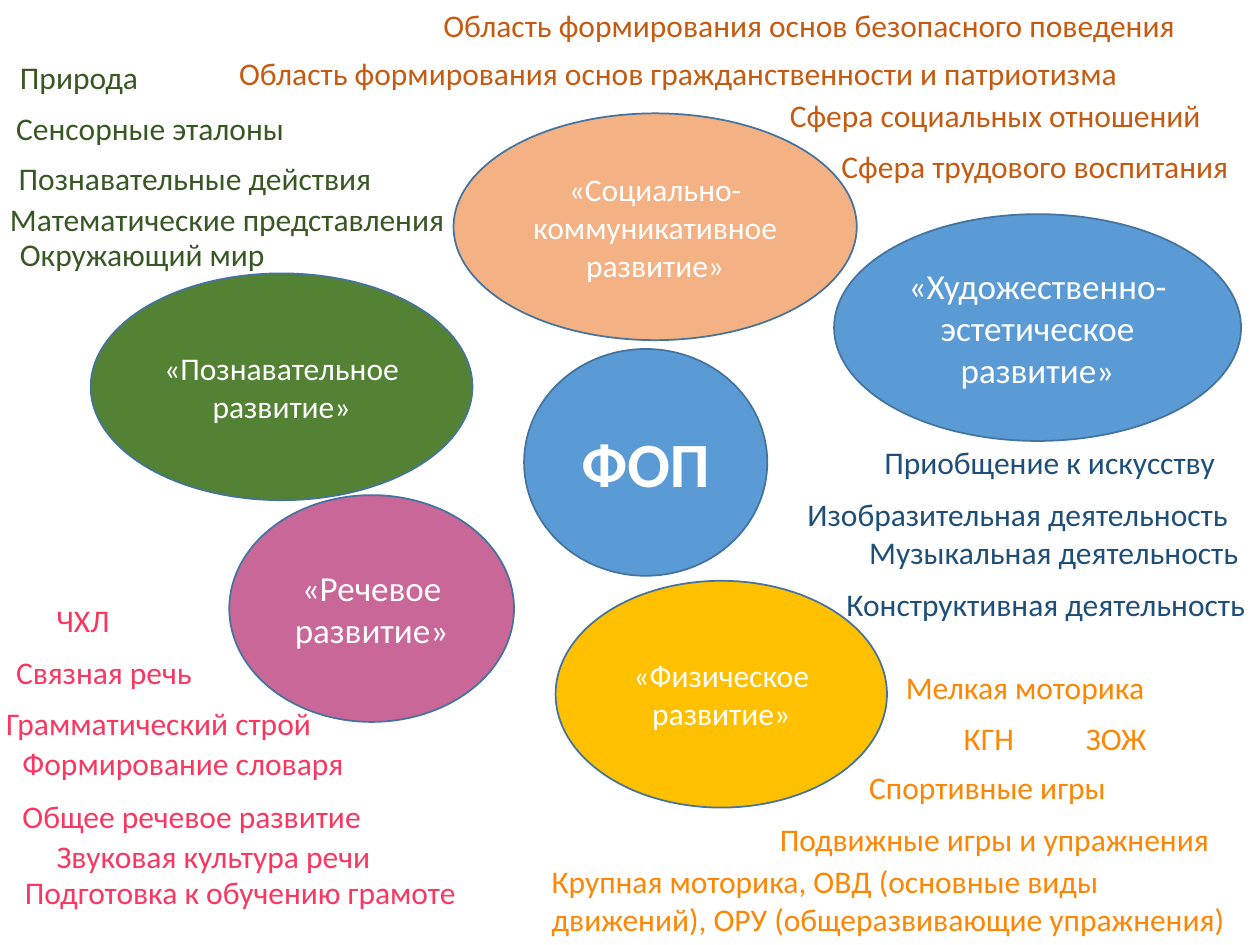
from pptx import Presentation
from pptx.dml.color import RGBColor
from pptx.enum.shapes import MSO_SHAPE
from pptx.enum.text import MSO_ANCHOR, MSO_AUTO_SIZE, PP_ALIGN
from pptx.util import Inches, Pt

OVAL = MSO_SHAPE.OVAL
MIDDLE = MSO_ANCHOR.MIDDLE
CENTER = PP_ALIGN.CENTER
GROW = MSO_AUTO_SIZE.SHAPE_TO_FIT_TEXT
FONT = "Calibri"
OVAL_HEIGHT = 1.8
LABEL_HEIGHT = 0.4


def color(hex_value):
    return RGBColor.from_string(hex_value)


def add_run(paragraph, text, size, hex_value, bold=False):
    run = paragraph.add_run()
    run.text = text
    run.font.name = FONT
    run.font.size = Pt(size)
    run.font.bold = bold
    run.font.color.rgb = color(hex_value)


prs = Presentation()
prs.slide_width = Inches(10)
prs.slide_height = Inches(7.5)
slide = prs.slides.add_slide(prs.slide_layouts[6])

# Programme in the centre and the five areas around it:
# left, top, width, fill, text size, paragraphs
areas = [
    (4.16, 2.77, 1.93, "5B9BD5", 36, ["ФОП"]),
    (0.72, 2.17, 3.03, "548235", 18, ["«Познавательное развитие»"]),
    (6.62, 1.7, 3.23, "5B9BD5", 20, ["«Художественно-эстетическое развитие»"]),
    (4.41, 4.61, 2.63, "FFC000", 18, ["«Физическое", "развитие»"]),
    (1.82, 3.93, 2.26, "C96798", 20, ["«Речевое развитие»"]),
    (3.6, 0.9, 3.2, "F4B183", 18, ["«Социально-коммуникативное развитие»"]),
]
for left, top, width, fill, size, lines in areas:
    area = slide.shapes.add_shape(
        OVAL, Inches(left), Inches(top), Inches(width), Inches(OVAL_HEIGHT))
    area.shadow.inherit = False
    area.fill.solid()
    area.fill.fore_color.rgb = color(fill)
    area.line.color.rgb = color("43739E")
    area.line.width = Pt(1)
    frame = area.text_frame
    frame.word_wrap = True
    frame.vertical_anchor = MIDDLE
    for index, line in enumerate(lines):
        paragraph = frame.add_paragraph() if index else frame.paragraphs[0]
        paragraph.alignment = CENTER
        add_run(paragraph, line, size, "FFFFFF", bold=lines == ["ФОП"])

# Topics of each area, by text colour: left, top, width, text
topics = {
    # Artistic and aesthetic
    "1F4E79": [
        (6.92, 3.47, 2.86, "Приобщение к искусству"),
        (6.31, 3.88, 3.58, "Изобразительная деятельность"),
        (6.8, 4.18, 3.16, "Музыкальная деятельность"),
        (6.62, 4.59, 3.4, "Конструктивная деятельность"),
    ],
    # Cognitive
    "385723": [
        (0.06, 0.41, 1.21, "Природа"),
        (0.03, 0.82, 2.41, "Сенсорные эталоны"),
        (0.05, 1.21, 3.03, "Познавательные действия"),
        (-0.02, 1.54, 3.69, "Математические представления"),
        (0.06, 1.82, 2.17, "Окружающий мир"),
    ],
    # Social and communicative
    "C55A11": [
        (3.42, 0, 6.42, "Область формирования основ безопасного поведения"),
        (1.8, 0.38, 8.2,
         "Область формирования основ гражданственности и патриотизма"),
        (6.17, 0.71, 3.5, "Сфера социальных отношений"),
        (6.58, 1.12, 3.31, "Сфера трудового воспитания"),
    ],
    # Speech
    "F93761": [
        (0.35, 4.72, 0.63, "ЧХЛ"),
        (0.03, 5.13, 1.61, "Связная речь"),
        (-0.05, 5.54, 2.65, "Грамматический строй"),
        (0.08, 5.86, 2.78, "Формирование словаря"),
        (0.08, 6.28, 2.92, "Общее речевое развитие"),
        (0.35, 6.59, 2.72, "Звуковая культура речи"),
        (0.1, 6.88, 3.66, "Подготовка к обучению грамоте"),
    ],
    # Physical
    "FD8603": [
        (7.09, 5.25, 2.11, "Мелкая моторика"),
        (7.55, 5.66, 0.61, "КГН"),
        (8.52, 5.66, 0.68, "ЗОЖ"),
        (6.8, 6.05, 2.1, "Спортивные игры"),
        (6.09, 6.46, 3.65, "Подвижные игры и упражнения"),
        (4.28, 6.79, 5.74, "Крупная моторика, ОВД (основные виды движений), "
                           "ОРУ (общеразвивающие упражнения)"),
    ],
}
for text_color, labels in topics.items():
    for left, top, width, text in labels:
        # Only the wide labels wrap; the longest one takes two lines
        height = 0.71 if len(text) > 60 else LABEL_HEIGHT
        label = slide.shapes.add_textbox(
            Inches(left), Inches(top), Inches(width), Inches(height))
        frame = label.text_frame
        frame.word_wrap = width > 5
        frame.auto_size = GROW
        add_run(frame.paragraphs[0], text, 18, text_color)

prs.save("out.pptx")
